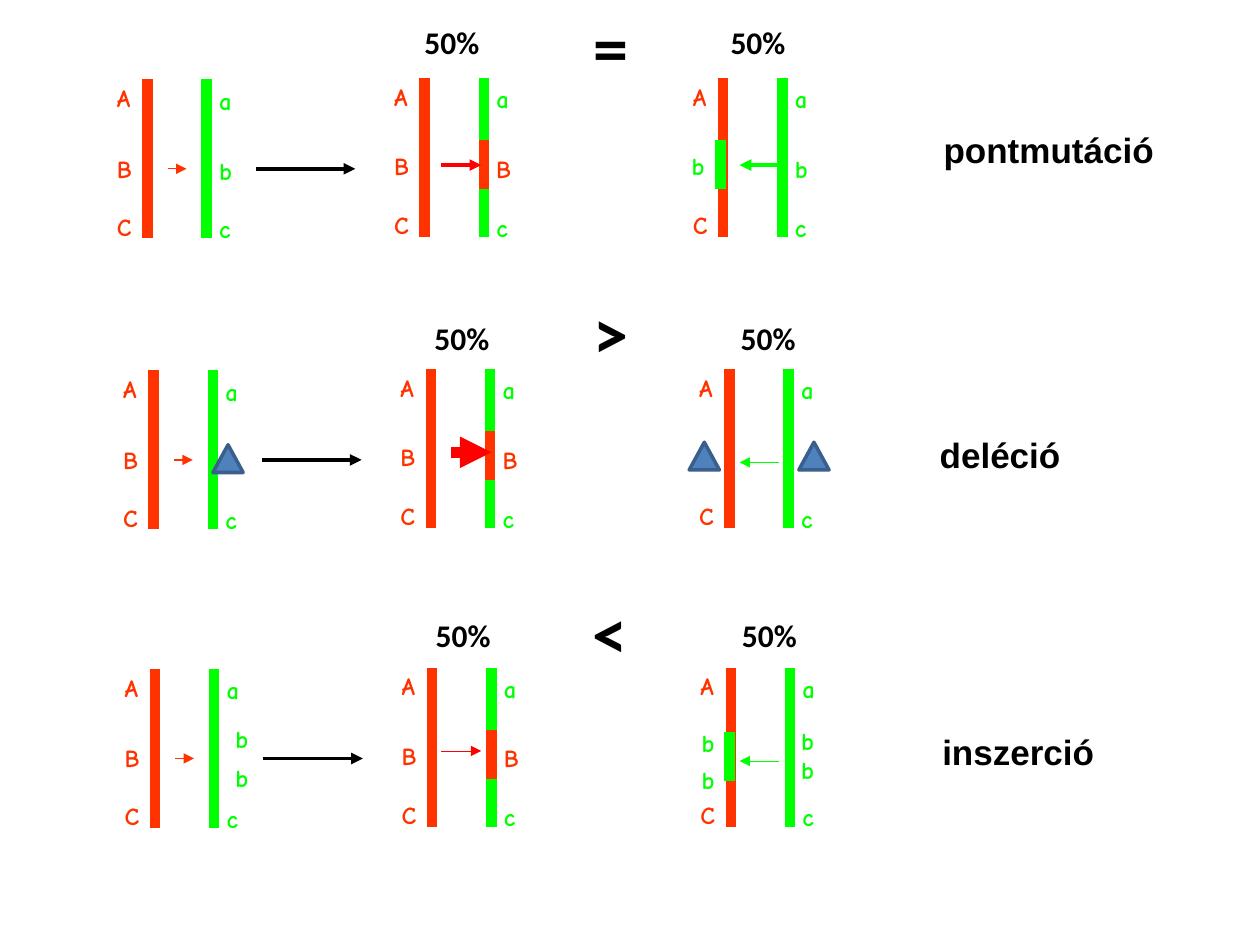
import dataclasses

import lxml.etree
import pptx
import pptx.dml.color
import pptx.enum.shapes
import pptx.enum.text
import pptx.oxml.ns
import pptx.util

PX = 9144  # one hundredth of an inch


@dataclasses.dataclass(frozen=True)
class Theme:
    black: str = "000000"
    parent_red: str = "FF3300"
    parent_green: str = "00FF00"
    arrow_red: str = "FF0000"
    loop_fill: str = "4F81BD"
    loop_line: str = "3A5F8C"
    allele_font: str = "Comic Neue"
    share_font: str = "Calibri"
    name_font: str = "Arial"
    allele_size: int = 14
    share_size: int = 18
    name_size: int = 20
    sign_size: int = 40
    strand_width: float = 6
    step_width: float = 2.25
    hint_width: float = 0.75
    loop_width: float = 2


THEME = Theme()
STRAND_GAP = 47
STRAND_LENGTH = 126

# Offsets inside a pair are measured from the top of its red strand.
# alleles: (letter, dx, dy); patches: (colour, dx, dy); loops: (dx, dy);
# exchange: (colour, start dx, end dx, dy, line width)
LEFT_PATCH = (THEME.parent_red, 47, 49)
LEFT_ALLELES = [("B", -34, 53), ("B", 47, 55)]
ROWS = [
    {
        "origin": (117, 63), "name": ("pontmutáció", 739, 97, 188),
        "sign": ("=", 461, -2), "share": (327, 13),
        "start": {"alleles": [("B", -34, 54), ("b", 47, 56)]},
        "left": {"alleles": LEFT_ALLELES, "patches": [LEFT_PATCH],
                 "exchange": (THEME.arrow_red, 13, 45, 69, 2.25)},
        "right": {"alleles": [("b", -35, 53), ("b", 47, 55)],
                  "patches": [(THEME.parent_green, -2, 49)],
                  "exchange": (THEME.parent_green, 44, 13, 69, 2.25)},
    },
    {
        "origin": (122, 294), "name": ("deléció", 736, 339, 117),
        "sign": (">", 461, 225), "share": (335, 248),
        "start": {"alleles": [("B", -34, 54)], "loops": [(47, 59)]},
        "left": {"alleles": LEFT_ALLELES, "patches": [LEFT_PATCH],
                 "exchange": (THEME.arrow_red, 16, 48, 66, 6)},
        "right": {"loops": [(-32, 58), (55, 58)],
                  "exchange": (THEME.parent_green, 39, 8, 74, 0.25)},
    },
    {
        "origin": (123, 531), "name": ("inszerció", 738, 575, 142),
        "sign": ("<", 460, 463), "share": (336, 484),
        "start": {"alleles": [("B", -34, 54), ("b", 54, 39), ("b", 54, 70)]},
        "left": {"alleles": LEFT_ALLELES, "patches": [LEFT_PATCH],
                 "exchange": (THEME.arrow_red, 7, 39, 66, 0.25)},
        "right": {"alleles": [("b", -33, 43), ("b", -33, 72),
                              ("b", 46, 41), ("b", 46, 64)],
                  "patches": [(THEME.parent_green, -1, 51)],
                  "exchange": (THEME.parent_green, 38, 7, 74, 0.25)},
    },
]


def rgb(value):
    return pptx.dml.color.RGBColor.from_string(value)


def add_text(page, text, left, top, width, height, font, size, color):
    box = page.shapes.add_textbox(left * PX, top * PX, width * PX, height * PX)
    box.text_frame.word_wrap = False
    box.text_frame.auto_size = pptx.enum.text.MSO_AUTO_SIZE.SHAPE_TO_FIT_TEXT
    para = box.text_frame.paragraphs[0]
    para.text = text
    para.font.name = font
    para.font.size = pptx.util.Pt(size)
    para.font.bold = True
    para.font.color.rgb = rgb(color)


def add_line(page, start, end, color, width, arrow=False):
    line = page.shapes.add_connector(
        pptx.enum.shapes.MSO_CONNECTOR.STRAIGHT,
        start[0] * PX, start[1] * PX, end[0] * PX, end[1] * PX)
    line.line.color.rgb = rgb(color)
    line.line.width = pptx.util.Pt(width)
    qn = pptx.oxml.ns.qn
    if arrow:
        outline = line.line._get_or_add_ln()
        lxml.etree.SubElement(outline, qn("a:tailEnd"), type="triangle")
    lxml.etree.SubElement(line._element.spPr, qn("a:effectLst"))


def add_allele(page, letter, left, top):
    """Capital letters belong to the red parent, small ones to the green."""
    color = THEME.parent_red if letter.isupper() else THEME.parent_green
    width = 34 if letter.isupper() else 31
    add_text(page, letter, left, top, width, 33,
             THEME.allele_font, THEME.allele_size, color)


def add_loop(page, left, top):
    loop = page.shapes.add_shape(
        pptx.enum.shapes.MSO_SHAPE.ISOSCELES_TRIANGLE,
        left * PX, top * PX, 24 * PX, 22 * PX)
    loop.shadow.inherit = False
    loop.fill.solid()
    loop.fill.fore_color.rgb = rgb(THEME.loop_fill)
    loop.line.color.rgb = rgb(THEME.loop_line)
    loop.line.width = pptx.util.Pt(THEME.loop_width)


def add_pair(page, x, y, alleles=(), patches=(), loops=(), exchange=None):
    """Draw two strands with their alleles and what happens at the middle one."""
    for left, color in ((x, THEME.parent_red),
                        (x + STRAND_GAP, THEME.parent_green)):
        add_line(page, (left, y), (left, y + STRAND_LENGTH),
                 color, THEME.strand_width)
    outer = [("A", -34, -2), ("C", -34, 100),
             ("a", STRAND_GAP, 0), ("c", STRAND_GAP, 102)]
    for letter, dx, dy in outer + list(alleles):
        add_allele(page, letter, x + dx, y + dy)
    for color, dx, dy in patches:
        add_line(page, (x + dx, y + dy), (x + dx, y + dy + 39),
                 color, THEME.strand_width)
    for dx, dy in loops:
        add_loop(page, x + dx, y + dy)
    if exchange:
        color, start, end, dy, width = exchange
        add_line(page, (x + start, y + dy), (x + end, y + dy),
                 color, width, arrow=True)


def add_row(page, row):
    x, y = row["origin"]
    add_pair(page, x, y, **row["start"])
    add_line(page, (x + 16, y + 71), (x + 31, y + 71),
             THEME.parent_red, THEME.hint_width, arrow=True)
    add_line(page, (x + 86, y + 71), (x + 165, y + 71),
             THEME.black, THEME.step_width, arrow=True)
    add_pair(page, x + 220, y - 1, **row["left"])
    add_pair(page, x + 457, y - 1, **row["right"])

    left, top = row["share"]
    for share_left in (left, left + 243):
        add_text(page, "50%", share_left, top, 64, 40,
                 THEME.share_font, THEME.share_size, THEME.black)
    sign, left, top = row["sign"]
    add_text(page, sign, left, top, 48, 77,
             THEME.share_font, THEME.sign_size, THEME.black)
    name, left, top, width = row["name"]
    add_text(page, name, left, top, width, 44,
             THEME.name_font, THEME.name_size, THEME.black)


def main():
    deck = pptx.Presentation()
    deck.slide_width, deck.slide_height = 1000 * PX, 750 * PX
    page = deck.slides.add_slide(deck.slide_layouts[6])
    for row in ROWS:
        add_row(page, row)
    deck.save("out.pptx")


if __name__ == "__main__":
    main()
